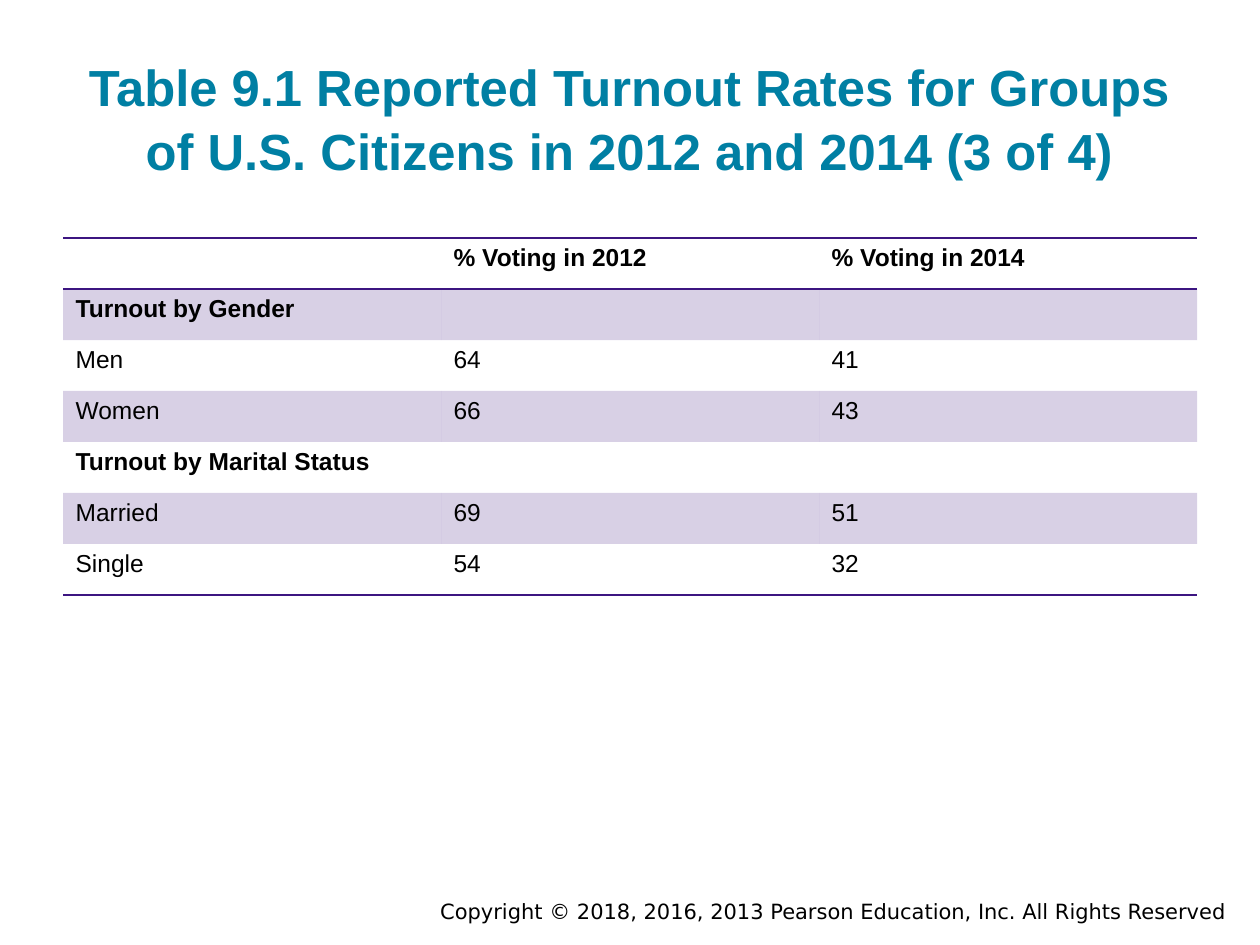
from typing import NamedTuple

from lxml.etree import SubElement
from pptx import Presentation
from pptx.dml.color import RGBColor
from pptx.enum.text import MSO_ANCHOR as Anchor, MSO_AUTO_SIZE as AutoSize, PP_ALIGN as Align
from pptx.oxml import parse_xml
from pptx.oxml.ns import nsdecls, qn
from pptx.util import Emu, Pt

PX = 914400 / 126
PURPLE, TEAL, BLACK = "3C1581", "007FA3", "000000"
PLAIN_STYLE = "{2D5ABB26-0587-4C30-8999-92F81FD0307C}"
COL_W, ROW_H = 378, 51


class Row(NamedTuple):
    texts: tuple[str, ...]
    bold: bool = False
    shaded: bool = False
    borders: str = ""  # T for top, B for bottom


ROWS = [
    Row(("", "% Voting in 2012", "% Voting in 2014"), bold=True, borders="TB"),
    Row(("Turnout by Gender", "", ""), bold=True, shaded=True),
    Row(("Men", "64", "41")),
    Row(("Women", "66", "43"), shaded=True),
    Row(("Turnout by Marital Status", "", ""), bold=True),
    Row(("Married", "69", "51"), shaded=True),
    Row(("Single", "54", "32"), borders="B"),
]


def px(n: int) -> Emu:
    return Emu(round(n * PX))


def color(value: str) -> RGBColor:
    return RGBColor.from_string(value)


def put_text(tf, text: str, *, size=14, font="Arial", fill=BLACK, bold=False,
             align=Align.LEFT, spacing=None) -> None:
    p = tf.paragraphs[0]
    p.alignment = align
    if spacing:
        p.line_spacing = spacing
    r = p.add_run()
    r.text = text
    r.font.size, r.font.name, r.font.bold = Pt(size), font, bold
    r.font.color.rgb = color(fill)


def place(sp, left: int, top: int, width: int, height: int) -> None:
    sp.left, sp.top, sp.width, sp.height = map(px, (left, top, width, height))


def shade(cell, value: str, percent: int) -> None:
    cell.fill.solid()
    cell.fill.fore_color.rgb = color(value)
    clr = cell._tc.tcPr.find(".//" + qn("a:srgbClr"))
    SubElement(clr, qn("a:alpha"), val=str(percent * 1000))


def add_borders(cell, sides: str, value: str) -> None:
    # Border lines come before the fill in the cell properties
    for i, side in enumerate(sides):
        cell._tc.get_or_add_tcPr().insert(i, parse_xml(
            f'<a:ln{side} {nsdecls("a")} w="12700"><a:solidFill>'
            f'<a:srgbClr val="{value}"/></a:solidFill></a:ln{side}>'))


def add_turnout_table(slide, left: int, top: int, rows: list[Row]) -> None:
    cols = len(rows[0].texts)
    frame = slide.shapes.add_table(len(rows), cols, px(left), px(top),
                                   px(cols * COL_W), px(len(rows) * ROW_H))
    table = frame.table
    table.first_row = table.horz_banding = False
    table._tbl.tblPr.find(qn("a:tableStyleId")).text = PLAIN_STYLE
    for r, row in enumerate(rows):
        table.rows[r].height = px(ROW_H)
        for c, text in enumerate(row.texts):
            cell = table.cell(r, c)
            if row.shaded:
                shade(cell, PURPLE, 20)
            else:
                cell.fill.background()
            add_borders(cell, row.borders, PURPLE)
            if text:
                put_text(cell.text_frame, text, bold=row.bold)


def main() -> None:
    prs = Presentation()
    prs.slide_width, prs.slide_height = px(1260), px(945)
    slide = prs.slides.add_slide(prs.slide_layouts[5])

    # Copyright line
    sp = slide.shapes.add_textbox(0, 0, 0, 0)
    place(sp, 252, 892, 987, 38)
    sp.text_frame.word_wrap = True
    put_text(sp.text_frame,
             "Copyright © 2018, 2016, 2013 Pearson Education, Inc. All Rights Reserved",
             size=12, font="DejaVu Sans", align=Align.RIGHT)

    # Title
    title = slide.shapes.title
    place(title, 63, 42, 1134, 151)
    tf = title.text_frame
    tf.word_wrap, tf.auto_size = True, AutoSize.NONE
    tf.vertical_anchor = Anchor.BOTTOM
    tf.margin_left = tf.margin_right = tf.margin_top = tf.margin_bottom = Pt(7.2)
    put_text(tf, "Table 9.1 Reported Turnout Rates for Groups of U.S. Citizens "
             "in 2012 and 2014 (3 of 4)", size=29, fill=TEAL, bold=True,
             align=Align.CENTER, spacing=1.05)

    # Turnout table
    add_turnout_table(slide, 63, 238, ROWS)

    prs.save("out.pptx")


if __name__ == "__main__":
    main()
